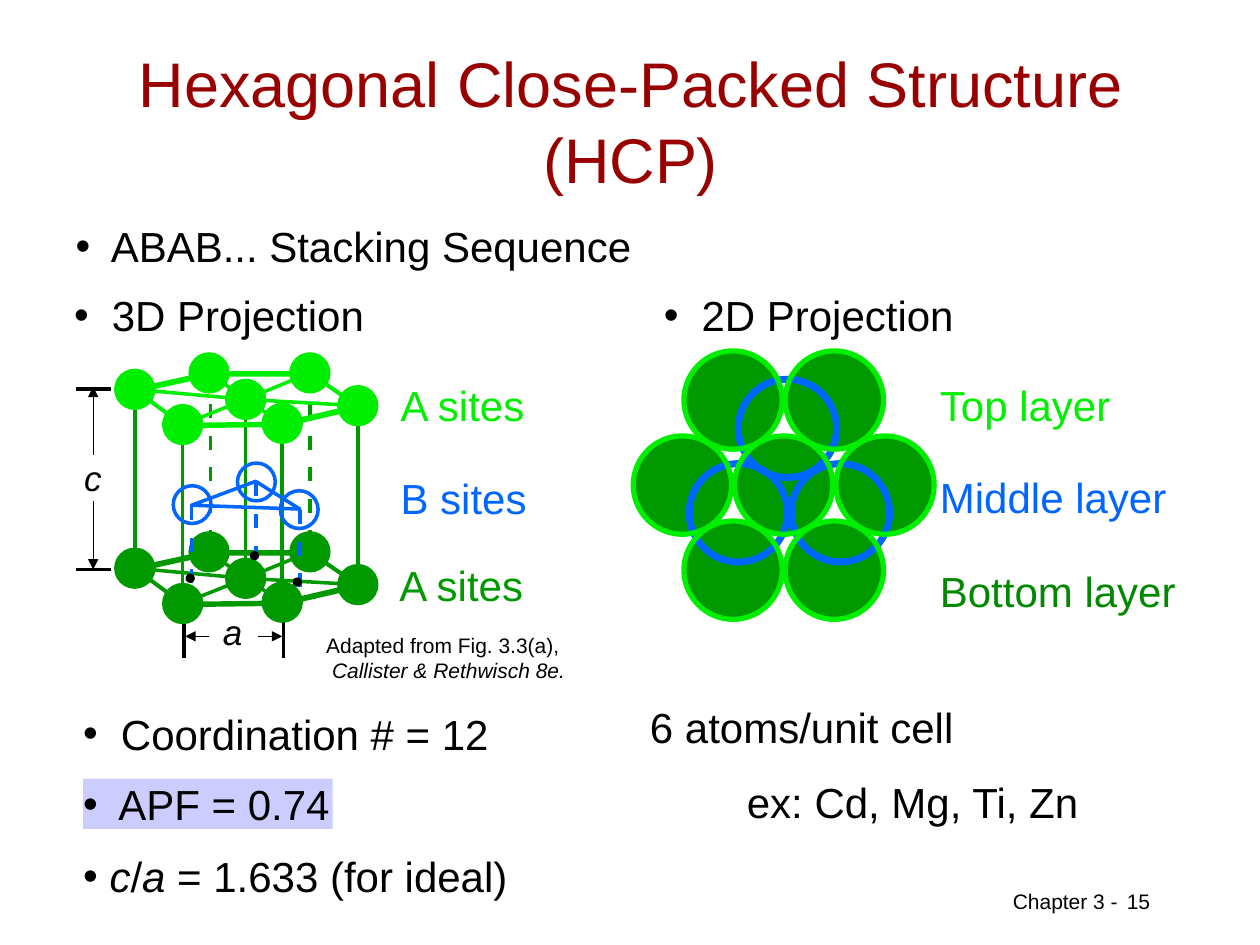
from lxml import etree
from pptx import Presentation
from pptx.dml.color import RGBColor
from pptx.enum.shapes import MSO_CONNECTOR, MSO_SHAPE
from pptx.enum.text import MSO_ANCHOR, PP_ALIGN
from pptx.oxml.ns import qn
from pptx.util import Inches, Pt

STRAIGHT, OVAL = MSO_CONNECTOR.STRAIGHT, MSO_SHAPE.OVAL
LEFT, CENTER = PP_ALIGN.LEFT, PP_ALIGN.CENTER
TOP, MIDDLE = MSO_ANCHOR.TOP, MSO_ANCHOR.MIDDLE
BLACK = RGBColor(0x00, 0x00, 0x00)
MAROON = RGBColor(0x99, 0x00, 0x00)
LAVENDER = RGBColor(0xCC, 0xCC, 0xFF)
DARK_GREEN = RGBColor(0x00, 0x99, 0x00)
LABEL_GREEN = RGBColor(0x00, 0x88, 0x00)
LIGHT_GREEN = RGBColor(0x00, 0xEE, 0x00)
BLUE = RGBColor(0x00, 0x66, 0xFF)

prs = Presentation()
prs.slide_width, prs.slide_height = Inches(10), Inches(7.5)
COL = prs.slide_width // 100
ROW = prs.slide_height // 75
shapes = prs.slides.add_slide(prs.slide_layouts[6]).shapes


def segment(x1, y1, x2, y2, color, width=2, arrow=False):
    """Straight line in grid units, with an optional arrowhead at its end."""
    line = shapes.add_connector(
        STRAIGHT, int(x1 * COL), int(y1 * ROW), int(x2 * COL), int(y2 * ROW))
    line.line.color.rgb = color
    line.line.width = Pt(width)
    if arrow:
        etree.SubElement(line.line._get_or_add_ln(), qn("a:tailEnd"), type="triangle")
    etree.SubElement(line._element.spPr, qn("a:effectLst"))


def circle(x, y, diameter, color, width=2, filled=True):
    """Circle centred on (x, y) in grid units."""
    disc = shapes.add_shape(
        OVAL, int((x - diameter / 2) * COL), int((y - diameter / 2) * ROW),
        int(diameter * COL), int(diameter * ROW))
    disc.shadow.inherit = False
    disc.line.color.rgb = color
    disc.line.width = Pt(width)
    if filled:
        disc.fill.solid()
        disc.fill.fore_color.rgb = color
    else:
        disc.fill.background()


# Dimension marks for c and a
for y in (30.9, 45.2):
    segment(8.8, y, 6, y, BLACK, 2.25)
for x in (14.6, 22.5):
    segment(x, 49.3, x, 52.2, BLACK, 2.25)
for arrow_ends in ((7.4, 39.8, 7.4, 45.2), (7.4, 36.1, 7.4, 30.7),
                   (20.5, 50.5, 22.4, 50.5), (16.6, 50.5, 14.7, 50.5)):
    segment(*arrow_ends, BLACK, 0.75, arrow=True)

# 3D unit cell: the bottom A layer repeats the top one, a height c below
HEIGHT_C = 14.2
DASH, DASH_PITCH = 1.1, 2.5
hexagon = [(10.7, 30.9), (14.5, 33.7), (22.4, 33.6), (28.4, 32.2), (24.6, 29.6), (16.6, 29.6)]
center = (19.5, 31.7)
b_sites = [(15.2, 40.1), (20.3, 38.2), (23.8, 40.4)]

for x, y in (*hexagon[:4], center):
    segment(x, y + HEIGHT_C, x, y, DARK_GREEN)
for x in (16.7, 24.6):
    for i in range(6):
        y = 29.6 + i * DASH_PITCH
        segment(x, y, x, y + DASH, DARK_GREEN)

outlines = [(BLUE, b_sites)]
for color, drop in ((DARK_GREEN, HEIGHT_C), (LIGHT_GREEN, 0)):
    for x, y in hexagon + [center]:
        circle(x, y + drop, 3, color)
    for x, y in hexagon:
        segment(center[0], center[1] + drop, x, y + drop, color)
    for shift in (0, 0.15):
        outlines.append((color, [(x + shift, y + drop + shift) for x, y in hexagon]))

for x, y in ((15.25, 40.05), (20.35, 38.25), (23.75, 40.45)):
    circle(x, y, 3, BLUE, filled=False)
for color, corners in outlines:
    points = [(int(x * COL), int(y * ROW)) for x, y in corners]
    builder = shapes.build_freeform(*points[0])
    builder.add_line_segments(points[1:], close=True)
    outline = builder.convert_to_shape()
    outline.shadow.inherit = False
    outline.fill.background()
    outline.line.color.rgb = color
    outline.line.width = Pt(2)

for x, y in b_sites:
    for i in range(3):
        dash_top = y + 0.1 + i * DASH_PITCH
        segment(x, dash_top, x, dash_top + DASH, BLUE)
for x, y in ((15.1, 45.9), (20.2, 44.1), (23.6, 46.2)):
    circle(x, y, 0.6, BLACK, 1)

# 2D projection: close-packed discs around a middle one
MID_X, MID_Y = 62.2, 38.6
HALF_STEP, LAYER_STEP = 4.02, 6.75
packing = [(0, 0), (-1, 1), (1, 1), (-2, 0), (2, 0), (1, -1), (-1, -1)]
for column, row in packing:
    circle(MID_X + column * HALF_STEP, MID_Y + row * LAYER_STEP, 7.8, DARK_GREEN, 1)
for x, y in ((58.6, 40.7), (66.7, 40.7), (62.5, 34)):
    circle(x, y, 7.8, BLUE, 4, filled=False)
for column, row in packing:
    circle(MID_X + column * HALF_STEP, MID_Y - 0.1 + row * LAYER_STEP,
           7.8, LIGHT_GREEN, 3, filled=False)

# left, top, width, height, padded, size, color, alignment, bullet indent,
# paragraphs (italic parts stand between underscores)
texts = [
    (4.2, 5.8, 91.7, 7.5, True, 36, MAROON, CENTER, 0,
     ["Hexagonal Close-Packed Structure (HCP)"]),
    (6, 17.5, 46, 4, False, 24, BLACK, LEFT, 2.8, ["ABAB... Stacking Sequence"]),
    (4.9, 22.5, 26, 5, True, 24, BLACK, LEFT, 3, ["3D Projection"]),
    (51.7, 22.5, 26, 5, True, 24, BLACK, LEFT, 3, ["2D Projection"]),
    (5.7, 35.7, 3.6, 4.3, True, 20, BLACK, LEFT, 0, ["_c_"]),
    (16.7, 48, 3.8, 4.3, True, 20, BLACK, LEFT, 0, ["_a_"]),
    (31.8, 30.1, 11, 4, False, 24, LIGHT_GREEN, LEFT, 0, ["A sites"]),
    (31.8, 37.5, 11, 4, False, 24, BLUE, LEFT, 0, ["B sites"]),
    (31.7, 44.4, 11, 4, False, 24, DARK_GREEN, LEFT, 0, ["A sites"]),
    (74.6, 30.1, 15, 4, False, 24, LIGHT_GREEN, LEFT, 0, ["Top layer"]),
    (74.6, 37.4, 19, 4, False, 24, BLUE, LEFT, 0, ["Middle layer"]),
    (74.6, 44.9, 20, 4, False, 24, LABEL_GREEN, LEFT, 0, ["Bottom layer"]),
    (24.9, 49.7, 22.5, 5, True, 12, BLACK, LEFT, 0,
     ["Adapted from Fig. 3.3(a),", " _Callister & Rethwisch 8e._"]),
    (6.6, 56.2, 33.5, 4, False, 24, BLACK, LEFT, 3, ["Coordination # = 12"]),
    (6.6, 61.8, 19.8, 4, False, 24, BLACK, LEFT, 2.8, ["APF = 0.74"]),
    (6.6, 67.5, 35, 4, False, 24, BLACK, LEFT, 2.1, ["_c_/_a_ = 1.633 (for ideal)"]),
    (50.6, 55.2, 35.9, 5, True, 24, BLACK, LEFT, 0, ["6 atoms/unit cell"]),
    (58.3, 61.1, 30, 5, True, 24, BLACK, LEFT, 0, ["ex: Cd, Mg, Ti, Zn"]),
    (79.4, 70, 11.5, 3, True, 12, BLACK, LEFT, 0, ["Chapter 3 -"]),
    (83.9, 70, 12.9, 3.9, True, 12, BLACK, CENTER, 0, ["15"]),
]
for left, top, width, height, padded, size, color, align, indent, paragraphs in texts:
    box = shapes.add_textbox(
        int(left * COL), int(top * ROW), int(width * COL), int(height * ROW))
    if paragraphs == ["APF = 0.74"]:
        box.fill.solid()
        box.fill.fore_color.rgb = LAVENDER
    frame = box.text_frame
    frame.word_wrap = True
    frame.vertical_anchor = MIDDLE if color == MAROON else TOP
    if not padded:
        frame.margin_left = frame.margin_right = frame.margin_top = frame.margin_bottom = 0
    for i, content in enumerate(paragraphs):
        paragraph = frame.add_paragraph() if i else frame.paragraphs[0]
        paragraph.alignment = align
        if indent:
            properties = paragraph._p.get_or_add_pPr()
            properties.set("marL", str(int(indent * COL)))
            properties.set("indent", str(-int(indent * COL)))
            etree.SubElement(properties, qn("a:buFont"), typeface="Arial")
            etree.SubElement(properties, qn("a:buChar"), char="•")
        paragraph.font.name = "Arial"
        paragraph.font.size = Pt(size)
        paragraph.font.color.rgb = color
        for j, part in enumerate(content.split("_")):
            if part:
                run = paragraph.add_run()
                run.text = part
                if j % 2:
                    run.font.italic = True

prs.save("out.pptx")
